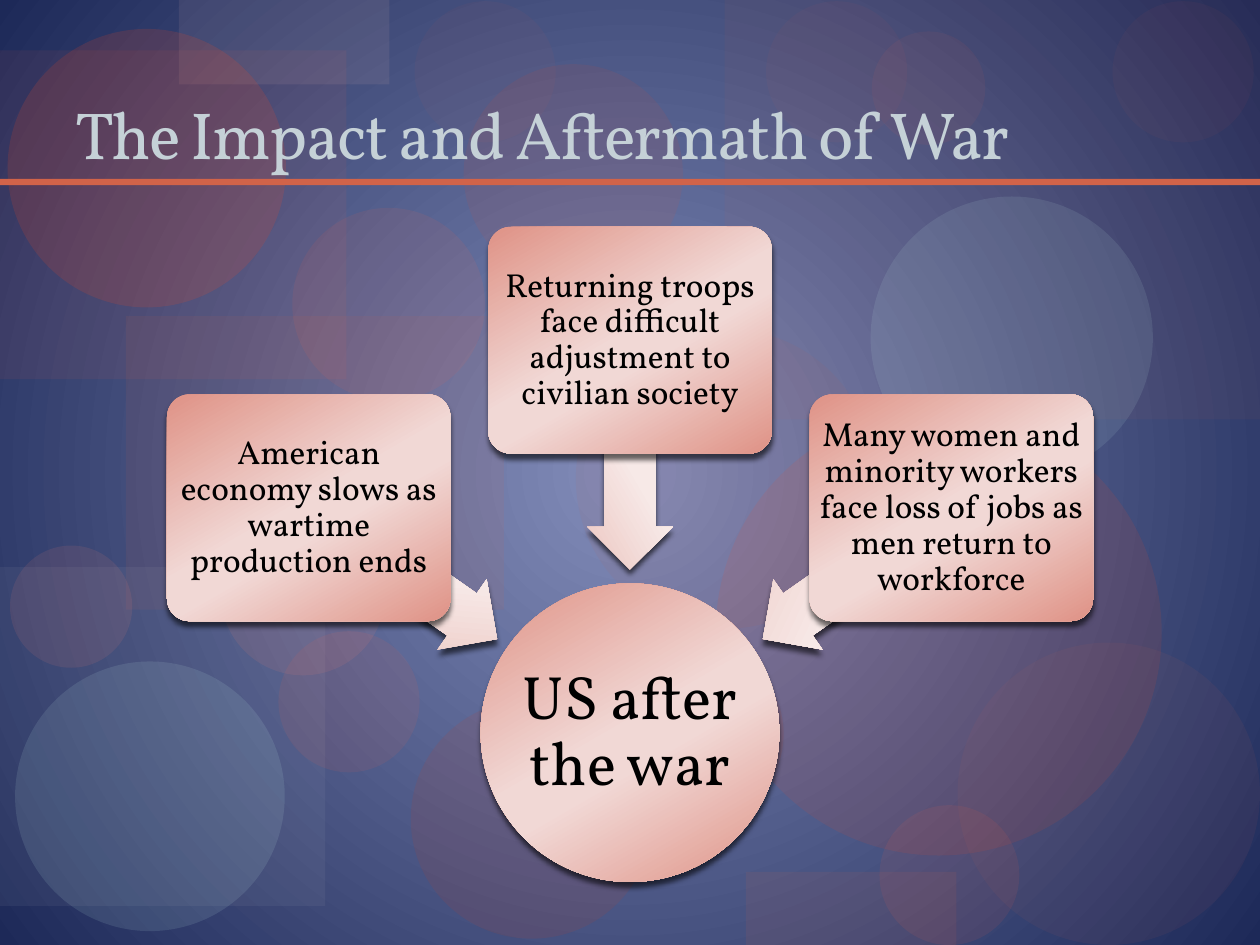
from lxml.etree import SubElement
from pptx import Presentation
from pptx.dml.color import RGBColor
from pptx.enum.shapes import MSO_SHAPE
from pptx.enum.text import MSO_ANCHOR, PP_ALIGN
from pptx.oxml.ns import qn
from pptx.util import Inches, Pt

FONT = "Vollkorn"
BLACK = RGBColor(0x00, 0x00, 0x00)
TITLE_GREY = RGBColor(0xC5, 0xD1, 0xD7)
GLOW = RGBColor(0x83, 0x8D, 0xBA)
NAVY = RGBColor(0x1D, 0x29, 0x58)
ORANGE = RGBColor(0xD1, 0x63, 0x49)
BRICK = RGBColor(0xBB, 0x41, 0x2B)
RUST = RGBColor(0xBF, 0x61, 0x54)
TOMATO = RGBColor(0xFF, 0x63, 0x47)
SCARLET = RGBColor(0xFF, 0x47, 0x1B)
CORAL = RGBColor(0xFF, 0x86, 0x74)
MINT = RGBColor(0xC1, 0xE8, 0xE4)
SILVER = RGBColor(0xB8, 0xBA, 0xC3)
BLUSH = RGBColor(0xE5, 0xB7, 0xB1)
CARD_EDGE = RGBColor(0xDF, 0x92, 0x86)
CARD_SHEEN = RGBColor(0xF1, 0xD8, 0xD5)
ARROW_EDGE = RGBColor(0xEC, 0xC7, 0xC2)
ARROW_SHEEN = RGBColor(0xF7, 0xE9, 0xE7)

RECT, OVAL = MSO_SHAPE.RECTANGLE, MSO_SHAPE.OVAL

# Backdrop pieces: shape, left, top, width, height, colour, opacity in percent
BACKDROP = [
    (RECT, 1, 2.51, 3, 2.33, ORANGE, 9),
    (OVAL, 3.26, 5.55, 1.92, 1.9, BRICK, 13),
    (RECT, 5.75, 0, 4.25, 3.33, ORANGE, 6),
    (RECT, 0, 4.5, 2.58, 2.69, SILVER, 8),
    (OVAL, 4.57, 2.61, 2.38, 2.38, RUST, 8),
    (OVAL, 6.98, 6.39, 1.11, 1.11, TOMATO, 9),
    (OVAL, 6.91, 1.56, 2.24, 2.24, MINT, 11),
    (OVAL, 0.12, 5.25, 2.14, 2.14, MINT, 12),
    (OVAL, 2.21, 5.01, 1.12, 1.12, TOMATO, 9),
    (OVAL, 4.56, 5.06, 1.66, 1.53, SCARLET, 8),
    (RECT, 0, 0.4, 2.75, 2.61, TOMATO, 7),
    (RECT, 1.42, 0, 1.67, 0.67, BLUSH, 10),
    (OVAL, 0.06, 0.23, 2.21, 2.21, SCARLET, 15),
    (OVAL, 0.08, 4.33, 0.97, 0.97, CORAL, 10),
    (OVAL, 2.32, 1.65, 1.53, 1.53, TOMATO, 9),
    (OVAL, 3.68, 0.51, 1.74, 1.74, SCARLET, 8),
    (OVAL, 5.68, 3.25, 3.54, 3.54, SCARLET, 10),
    (OVAL, 6.08, 0.01, 1.12, 1.12, TOMATO, 4),
    (OVAL, 7.6, 5.1, 2.4, 2.4, RUST, 8),
    (OVAL, 1.75, 4.05, 1.31, 1.31, CORAL, 10),
    (OVAL, 6.92, 0.25, 0.9, 0.9, TOMATO, 6),
    (OVAL, 8.83, 0.01, 1.12, 1.12, TOMATO, 4),
    (RECT, 5.92, 6.92, 1.67, 0.58, ORANGE, 10),
    (OVAL, 3.29, 0.01, 1.12, 1.12, TOMATO, 4),
    (RECT, 0, 1.42, 10, 0.05, ORANGE, 100),
]

# Causes: text, side (-1 left, 0 centre, 1 right), card top, arrow top, arrow rotation
CAUSES = [
    ("American economy slows as wartime production ends", -1, 3.13, 4.21, 215),
    ("Returning troops face difficult adjustment to civilian society", 0, 1.8, 3.27, 270),
    ("Many women and minority workers face loss of jobs as men return to workforce",
     1, 3.13, 4.21, 325),
]
CENTRE = 5
CARD_WIDTH, CARD_HEIGHT, CARD_STEP = 2.25, 1.8, 2.55
ARROW_WIDTH, ARROW_HEIGHT, ARROW_STEP = 1.82, 0.68, 1.8
HUB_TOP, HUB_SIZE = 4.63, 2.37


def add_color(parent, color, opacity=100):
    element = SubElement(parent, qn("a:srgbClr"), val=str(color))
    if opacity < 100:
        SubElement(element, qn("a:alpha"), val=str(opacity * 1000))


def set_gradient(owner, fill, stops):
    """Fill with the stops and return the gradient element for its direction."""
    fill.gradient()
    gradient = next(owner.iter(qn("a:gradFill")))
    gradient.clear()
    gradient.set("rotWithShape", "1")
    stop_list = SubElement(gradient, qn("a:gsLst"))
    for position, color in stops:
        stop = SubElement(stop_list, qn("a:gs"), pos=str(position * 1000))
        add_color(stop, color)
    return gradient


class SlideBuilder:
    def __init__(self, slide, font):
        self.slide = slide
        self.font = font

    def background(self, inner, outer):
        gradient = set_gradient(self.slide.element, self.slide.background.fill,
                                [(0, inner), (100, outer)])
        circle = SubElement(gradient, qn("a:path"), {"path": "circle"})
        SubElement(circle, qn("a:fillToRect"), l="50000", t="50000", r="50000", b="50000")

    def shape(self, kind, left, top, width, height):
        shape = self.slide.shapes.add_shape(
            kind, Inches(left), Inches(top), Inches(width), Inches(height))
        shape.shadow.inherit = False
        shape.line.fill.background()
        return shape

    def flat(self, kind, left, top, width, height, color, opacity):
        shape = self.shape(kind, left, top, width, height)
        shape.fill.solid()
        shape.fill.fore_color.rgb = color
        if opacity < 100:
            color_element = next(shape.element.spPr.iter(qn("a:srgbClr")))
            SubElement(color_element, qn("a:alpha"), val=str(opacity * 1000))

    def glossy(self, kind, left, top, width, height, edge, sheen):
        shape = self.shape(kind, left, top, width, height)
        gradient = set_gradient(shape.element.spPr, shape.fill,
                                [(0, edge), (48, sheen), (58, sheen), (100, edge)])
        SubElement(gradient, qn("a:lin"), ang=str(60 * 60000), scaled="0")
        effects = shape.element.spPr.find(qn("a:effectLst"))
        shadow = SubElement(effects, qn("a:outerShdw"), blurRad=str(Pt(3)), dist=str(Pt(3)),
                            dir=str(90 * 60000), rotWithShape="0")
        add_color(shadow, BLACK, 60)
        return shape

    def format_text(self, text_frame, size, color, alignment, anchor):
        text_frame.word_wrap = True
        text_frame.vertical_anchor = anchor
        paragraph = text_frame.paragraphs[0]
        paragraph.alignment = alignment
        run_font = paragraph.runs[0].font
        run_font.name = self.font
        run_font.size = Pt(size)
        run_font.color.rgb = color
        return paragraph

    def title(self, text):
        title = self.slide.shapes.title
        title.left, title.top = Inches(0.5), Inches(0.17)
        title.width, title.height = Inches(9), Inches(1.25)
        title.text_frame.text = text
        paragraph = self.format_text(title.text_frame, 38, TITLE_GREY,
                                     PP_ALIGN.LEFT, MSO_ANCHOR.BOTTOM)
        paragraph.runs[0].font._element.set("spc", "-100")
        # Bring the title in front of the backdrop
        self.slide.shapes.element.append(title.element)

    def label(self, text, left, top, width, height, size, margin):
        box = self.slide.shapes.add_textbox(
            Inches(left), Inches(top), Inches(width), Inches(height))
        frame = box.text_frame
        frame.text = text
        frame.margin_left = frame.margin_right = Inches(margin)
        frame.margin_top = frame.margin_bottom = Inches(margin)
        paragraph = self.format_text(frame, size, BLACK, PP_ALIGN.CENTER, MSO_ANCHOR.MIDDLE)
        paragraph.line_spacing = 0.9

    def hub(self, text):
        area = (CENTRE - HUB_SIZE / 2, HUB_TOP, HUB_SIZE, HUB_SIZE)
        self.glossy(OVAL, *area, CARD_EDGE, CARD_SHEEN)
        self.label(text, *area, size=35, margin=0.02)

    def arrow(self, side, top, rotation):
        left = CENTRE + side * ARROW_STEP - ARROW_WIDTH / 2
        arrow = self.glossy(MSO_SHAPE.LEFT_ARROW, left, top, ARROW_WIDTH, ARROW_HEIGHT,
                            ARROW_EDGE, ARROW_SHEEN)
        arrow.adjustments[0], arrow.adjustments[1] = 0.6, 0.5
        arrow.rotation = rotation

    def card(self, text, side, top):
        area = (CENTRE + side * CARD_STEP - CARD_WIDTH / 2, top, CARD_WIDTH, CARD_HEIGHT)
        card = self.glossy(MSO_SHAPE.ROUNDED_RECTANGLE, *area, CARD_EDGE, CARD_SHEEN)
        card.adjustments[0] = 0.1
        self.label(text, *area, size=19, margin=0.04)


def main():
    presentation = Presentation()
    presentation.slide_width, presentation.slide_height = Inches(10), Inches(7.5)
    slide = presentation.slides.add_slide(presentation.slide_layouts[5])
    builder = SlideBuilder(slide, FONT)

    # Backdrop and title
    builder.background(GLOW, NAVY)
    for piece in BACKDROP:
        builder.flat(*piece)
    builder.title("The Impact and Aftermath of War")

    # Causes pointing to the hub
    builder.hub("US after the war")
    for text, side, card_top, arrow_top, rotation in CAUSES:
        builder.arrow(side, arrow_top, rotation)
        builder.card(text, side, card_top)

    presentation.save("out.pptx")


if __name__ == "__main__":
    main()
